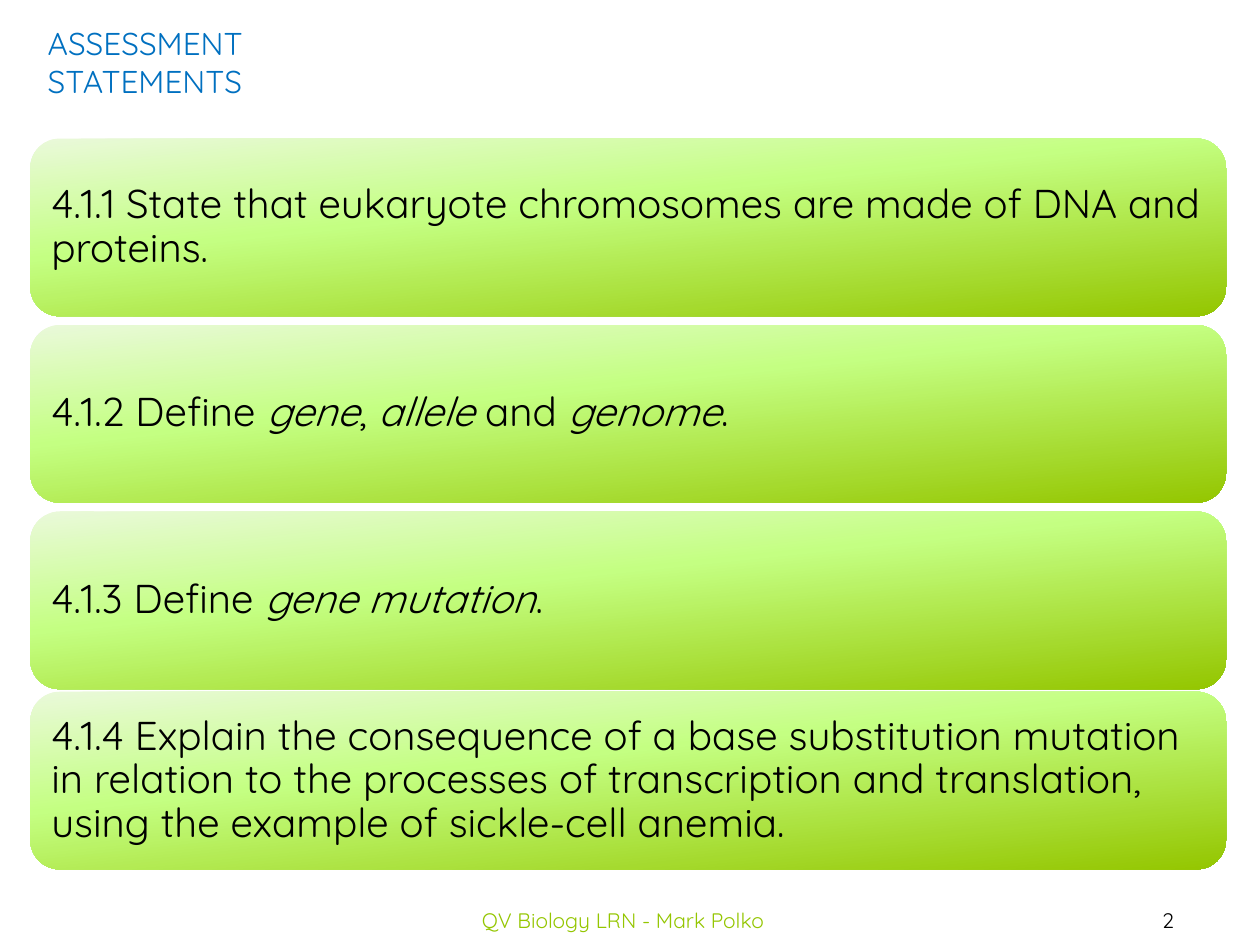
from copy import deepcopy

from pptx import Presentation
from pptx.dml.color import RGBColor
from pptx.enum import shapes, text
from pptx.util import Pt

FONT = "Quicksand"
BLACK = RGBColor(0x00, 0x00, 0x00)
BLUE = RGBColor(0x00, 0x70, 0xC0)
GREEN = RGBColor(0x94, 0xC6, 0x00)
GRADIENT = [
    (0, RGBColor(0xEA, 0xF9, 0xDA)),
    (0.4, RGBColor(0xC4, 0xFF, 0x82)),
    (1, GREEN),
]
GRADIENT_ANGLE = 276

TITLE = "ASSESSMENT\vSTATEMENTS"
FOOTER = "QV Biology LRN - Mark Polko"
PAGE_NUMBER = "2"

STATEMENTS = [
    ["4.1.1 State that eukaryote chromosomes are made of DNA and proteins."],
    ["4.1.2 Define ", "gene", ", ", "allele ", "and ", "genome", "."],
    ["4.1.3 Define ", "gene mutation", "."],
    ["4.1.4 Explain the consequence of a base substitution mutation in relation "
     "to the processes of transcription and translation, using the example of "
     "sickle-cell anemia."],
]
CARD_LEFT, CARD_WIDTH, CARD_HEIGHT = 17.28, 683.28, 101.52
CARD_TOPS = [79.2, 185.76, 292.32, 395.28]


def write(frame, parts, size, color, align=text.PP_ALIGN.LEFT,
          anchor=text.MSO_ANCHOR.MIDDLE, spacing=1.0, inset=None):
    frame.word_wrap = True
    frame.vertical_anchor = anchor
    if inset is not None:
        frame.margin_left = frame.margin_right = Pt(inset)
        frame.margin_top = frame.margin_bottom = Pt(inset)
    paragraph = frame.paragraphs[0]
    paragraph.alignment = align
    paragraph.line_spacing = spacing
    for index, part in enumerate(parts):
        for number, line in enumerate(part.split("\v")):
            if number:
                paragraph.add_line_break()
            run = paragraph.add_run()
            run.text = line
            run.font.name = FONT
            run.font.size = Pt(size)
            run.font.color.rgb = color
            run.font.italic = index % 2 == 1


def fill_gradient(shape):
    shape.fill.gradient()
    shape.fill.gradient_angle = GRADIENT_ANGLE
    first = shape.fill.gradient_stops[0]._gs
    first.addnext(deepcopy(first))
    for stop, (position, color) in zip(shape.fill.gradient_stops, GRADIENT):
        stop.position = position
        stop.color.rgb = color


def add_label(slide, left, top, width, height, content, **style):
    label = slide.shapes.add_textbox(Pt(left), Pt(top), Pt(width), Pt(height))
    write(label.text_frame, [content], **style)


def add_card(slide, top, statement):
    card = slide.shapes.add_shape(
        shapes.MSO_SHAPE.ROUNDED_RECTANGLE,
        Pt(CARD_LEFT), Pt(top), Pt(CARD_WIDTH), Pt(CARD_HEIGHT))
    card.shadow.inherit = False
    card.line.fill.background()
    fill_gradient(card)
    write(card.text_frame, statement, size=23, color=BLACK, spacing=0.9, inset=7.2)


def main():
    deck = Presentation()
    deck.slide_width, deck.slide_height = Pt(720), Pt(540)
    slide = deck.slides.add_slide(deck.slide_layouts[6])
    center = text.PP_ALIGN.CENTER
    add_label(slide, 614.88, 511.2, 105.12, 28.8, PAGE_NUMBER,
              size=12, color=BLACK, align=center)
    add_label(slide, 218.16, 511.2, 275.76, 28.8, FOOTER,
              size=12, color=GREEN, align=center)
    add_label(slide, 20.16, 10.08, 231.12, 51.12, TITLE,
              size=18, color=BLUE, anchor=text.MSO_ANCHOR.TOP)
    for top, statement in zip(CARD_TOPS, STATEMENTS):
        add_card(slide, top, statement)
    deck.save("out.pptx")


if __name__ == "__main__":
    main()
